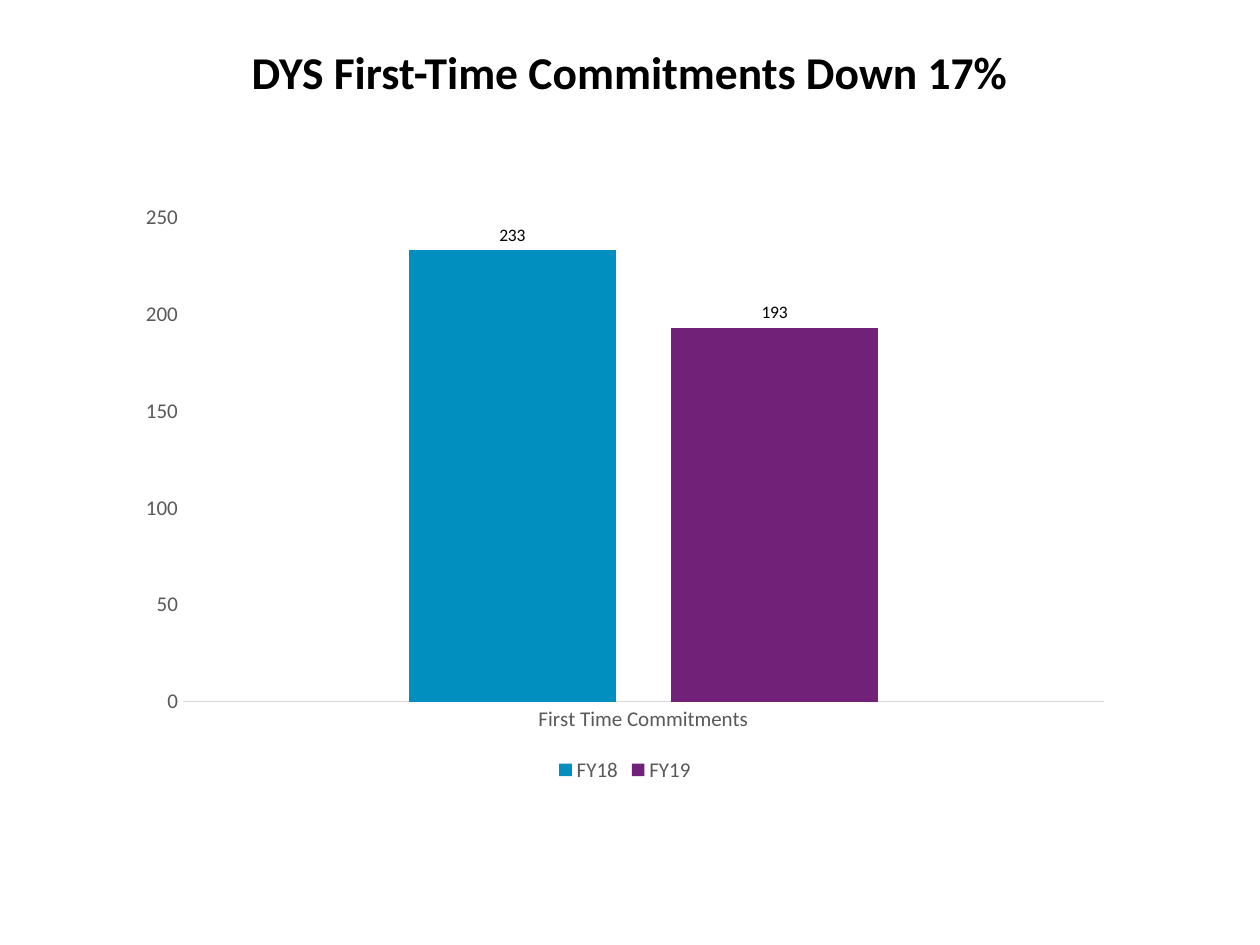
from dataclasses import dataclass

from pptx import Presentation
from pptx.chart.data import CategoryChartData as Data
from pptx.dml.color import RGBColor
from pptx.enum.chart import XL_CHART_TYPE as Kind
from pptx.enum.chart import XL_LABEL_POSITION as Spot
from pptx.enum.chart import XL_LEGEND_POSITION as Side
from pptx.enum.chart import XL_TICK_MARK as Tick
from pptx.enum.text import MSO_ANCHOR as Anchor
from pptx.enum.text import PP_ALIGN as Align
from pptx.util import Inches, Pt

BLACK = RGBColor(0x00, 0x00, 0x00)
GREY = RGBColor(0x59, 0x59, 0x59)
PALE = RGBColor(0xD9, 0xD9, 0xD9)
BLUE = RGBColor(0x00, 0x8F, 0xBE)
PLUM = RGBColor(0x71, 0x21, 0x77)
FACE = "Calibri"
WIDE, HIGH = 10, 7.5


@dataclass(frozen=True)
class Box:
    """A place on the slide, in inches."""
    left: float
    top: float
    width: float
    height: float

    def spans(self) -> list[int]:
        return [Inches(n) for n in (self.left, self.top, self.width, self.height)]


@dataclass(frozen=True)
class Year:
    name: str
    count: int
    color: RGBColor


TITLE = Box(WIDE * 0.05, HIGH * 0.04, WIDE * 0.9, 1.25)
PLOT = Box(WIDE * 0.1, 1.53, 7.92, 4.72)
YEARS = [Year("FY18", 233, BLUE), Year("FY19", 193, PLUM)]


def style(font, size: float, color: RGBColor, bold: bool = False) -> None:
    font.name, font.size, font.bold = FACE, Pt(size), bold
    font.color.rgb = color


def add_title(slide, box: Box, text: str) -> None:
    frame = slide.shapes.add_textbox(*box.spans()).text_frame
    frame.word_wrap = True
    frame.vertical_anchor = Anchor.TOP
    para = frame.paragraphs[0]
    para.alignment = Align.CENTER
    run = para.add_run()
    run.text = text
    style(run.font, 26, BLACK, bold=True)


def add_bars(slide, box: Box, group: str, years: list[Year]) -> None:
    data = Data()
    data.categories = [group]
    for year in years:
        data.add_series(year.name, [year.count])
    chart = slide.shapes.add_chart(Kind.COLUMN_CLUSTERED, *box.spans(), data).chart
    chart.has_title = False
    style(chart.font, 10, BLACK)

    # Bars and their values
    plot = chart.plots[0]
    plot.gap_width, plot.overlap = 219, -27
    plot.vary_by_categories = False
    for bar, year in zip(plot.series, years):
        bar.format.fill.solid()
        bar.format.fill.fore_color.rgb = year.color
        bar.invert_if_negative = False
        tags = bar.data_labels
        tags.show_value = True
        tags.position = Spot.OUTSIDE_END
        style(tags.font, 10, BLACK)

    # Axes
    for axis in (chart.category_axis, chart.value_axis):
        axis.major_tick_mark = axis.minor_tick_mark = Tick.NONE
        axis.has_major_gridlines = False
        style(axis.tick_labels.font, 12, GREY)
    base = chart.category_axis.format.line
    base.color.rgb, base.width = PALE, Pt(0.75)
    scale = chart.value_axis
    scale.minimum_scale, scale.maximum_scale, scale.major_unit = 0, 250, 50
    scale.format.line.fill.background()

    # Legend
    chart.has_legend = True
    chart.legend.position = Side.BOTTOM
    chart.legend.include_in_layout = False
    style(chart.legend.font, 12, GREY)


def main() -> None:
    deck = Presentation()
    deck.slide_width, deck.slide_height = Inches(WIDE), Inches(HIGH)
    slide = deck.slides.add_slide(deck.slide_layouts[6])
    add_title(slide, TITLE, "DYS First-Time Commitments Down 17%")
    add_bars(slide, PLOT, "First Time Commitments", YEARS)
    deck.save("out.pptx")


if __name__ == "__main__":
    main()
